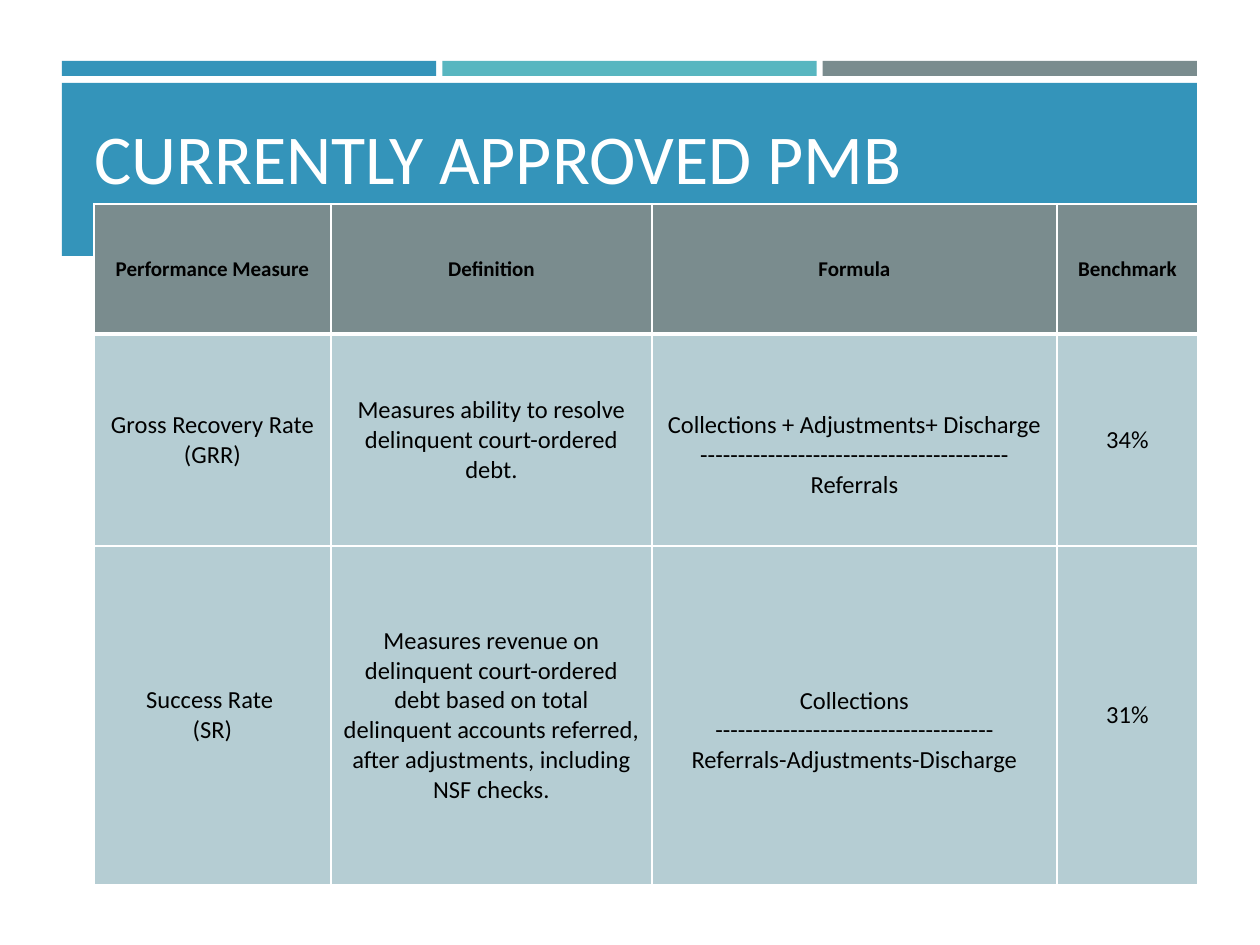
from lxml import etree
from pptx import Presentation
from pptx.dml.color import RGBColor
from pptx.enum.shapes import MSO_SHAPE
from pptx.enum.text import MSO_ANCHOR, PP_ALIGN
from pptx.oxml.ns import qn
from pptx.util import Pt

RECT = MSO_SHAPE.RECTANGLE
MIDDLE, BOTTOM = MSO_ANCHOR.MIDDLE, MSO_ANCHOR.BOTTOM
CENTER = PP_ALIGN.CENTER
FONT = "Calibri"
COLORS = {"blue": "3494BA", "teal": "58B6C0", "gray": "7A8C8E",
          "pale": "B5CDD3", "white": "FFFFFF", "black": "000000"}

TITLE = "CURRENTLY APPROVED PMB"
BARS = ["blue", "teal", "gray"]
ROWS = [
    ["Performance Measure", "Definition", "Formula", "Benchmark"],
    ["Gross Recovery Rate (GRR)",
     "Measures ability to resolve delinquent court-ordered debt.",
     "Collections + Adjustments+ Discharge\n"
     "-----------------------------------------\nReferrals",
     "34%"],
    ["Success Rate \n(SR)",
     "Measures revenue on delinquent court-ordered debt based on total "
     "delinquent accounts referred, after adjustments, including NSF checks.",
     "Collections\n-------------------------------------\n"
     "Referrals-Adjustments-Discharge",
     "31%"],
]
WIDTHS = [237, 321, 405, 141]
HEIGHTS = [130, 212, 339]
FORMULA = 2
LEFT, WIDTH, GAP = 62, 1135, 6


def px(n):
    return round(n * 914400 / 126)


def rgb(name):
    return RGBColor.from_string(COLORS[name])


def style(frame, size, color, bold=False, align=None):
    for para in frame.paragraphs:
        para.alignment = align
        for run in para.runs:
            font = run.font
            font.name, font.size, font.bold = FONT, Pt(size), bold
            font.color.rgb = rgb(color)


def add_bar(slide, x, y, w, h, color):
    bar = slide.shapes.add_shape(RECT, px(x), px(y), px(w), px(h))
    bar.shadow.inherit = False
    bar.fill.solid()
    bar.fill.fore_color.rgb = rgb(color)
    bar.line.fill.background()


def add_edges(cell, row):
    thick = {"L": 1, "R": 1, "T": 3 if row == 1 else 1,
             "B": 3 if row == 0 else 1}
    props = cell._tc.get_or_add_tcPr()
    for side, width in thick.items():
        line = etree.SubElement(props, qn("a:ln" + side), w=str(Pt(width)))
        fill = etree.SubElement(line, qn("a:solidFill"))
        etree.SubElement(fill, qn("a:srgbClr"), val=COLORS["white"])


def add_grid(slide):
    grid = slide.shapes.add_table(
        len(ROWS), len(WIDTHS), px(94), px(204),
        px(sum(WIDTHS)), px(sum(HEIGHTS))).table
    for col, width in zip(grid.columns, WIDTHS):
        col.width = px(width)
    for r, texts in enumerate(ROWS):
        grid.rows[r].height = px(HEIGHTS[r])
        head = r == 0
        for c, text in enumerate(texts):
            cell = grid.cell(r, c)
            cell.text_frame.text = text
            style(cell.text_frame, 12 if head else 14, "black", head, CENTER)
            cell.vertical_anchor = MIDDLE
            cell.margin_left = cell.margin_right = px(9)
            cell.margin_bottom = px(5)
            cell.margin_top = px(35 if c == FORMULA and not head else 5)
            add_edges(cell, r)
            cell.fill.solid()
            cell.fill.fore_color.rgb = rgb("gray" if head else "pale")


def main():
    deck = Presentation()
    deck.slide_width, deck.slide_height = px(1260), px(945)
    slide = deck.slides.add_slide(deck.slide_layouts[6])
    span = (WIDTH - GAP * (len(BARS) - 1)) / len(BARS)
    for i, color in enumerate(BARS):
        add_bar(slide, LEFT + i * (span + GAP), 61, span, 15, color)
    add_bar(slide, LEFT, 83, WIDTH, 173, "blue")
    box = slide.shapes.add_textbox(px(82), px(94), px(1129), px(111))
    frame = box.text_frame
    frame.word_wrap = True
    frame.vertical_anchor = BOTTOM
    frame.text = TITLE
    style(frame, 40, "white")
    add_grid(slide)
    deck.save("out.pptx")


if __name__ == "__main__":
    main()
